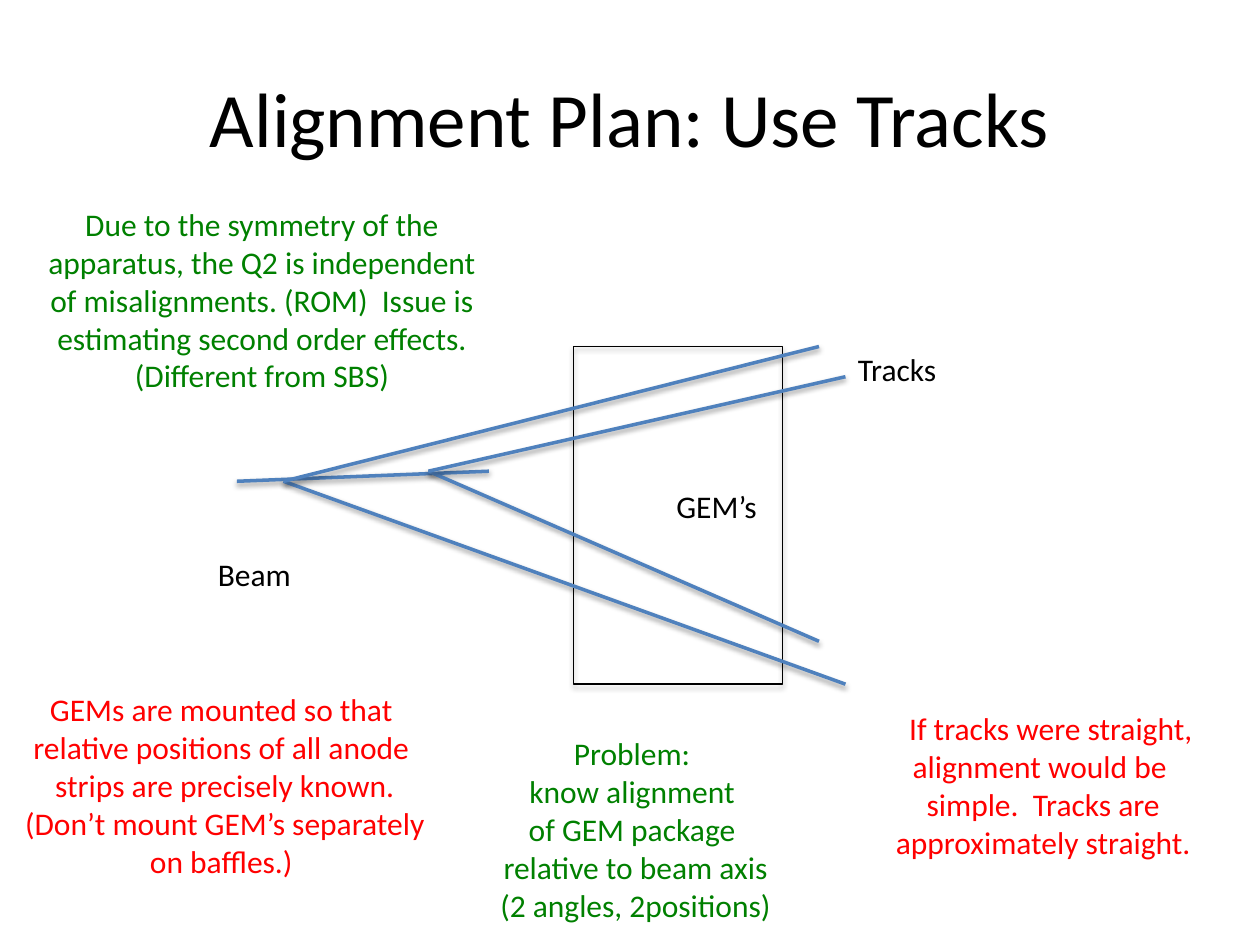
from lxml.etree import SubElement
from pptx import Presentation
from pptx.dml.color import RGBColor
from pptx.enum.shapes import MSO_CONNECTOR, MSO_SHAPE
from pptx.enum.text import MSO_ANCHOR, MSO_AUTO_SIZE, PP_ALIGN
from pptx.oxml.ns import qn
from pptx.util import Inches, Pt

BLACK = RGBColor(0x00, 0x00, 0x00)
BLUE = RGBColor(0x4F, 0x81, 0xBD)
GREEN = RGBColor(0x00, 0x80, 0x00)
RED = RGBColor(0xFF, 0x00, 0x00)

# The slide is a grid of 100 columns by 75 rows with square cells
CELL = Inches(0.1)
COLUMNS, ROWS = 100, 75

# Points of the drawing, as (column, row)
FIRST_VERTEX = (22.5, 38.2)
SECOND_VERTEX = (34, 37.4)
BEAM = ((18.8, 38.2), (38.8, 37.4))
TRACKS = [
    (SECOND_VERTEX, (65, 50.9)),
    (SECOND_VERTEX, (67.1, 29.9)),
    (FIRST_VERTEX, (67.1, 54.3)),
    (FIRST_VERTEX, (65, 27.5)),
]
GEM_PACKAGE = (45.5, 27.5, 16.6, 26.8)

# Text and its box, as (column, row, columns, rows)
LABELS = [
    ("Beam", (16.3, 43.6, 7.9, 4)),
    ("GEM’s", (52.7, 38.2, 8.6, 4)),
    ("Tracks", (67.1, 27.3, 8.5, 4)),
]
NOTES = [
    (["If tracks were straight, ", "alignment would be ", "simple.  Tracks are",
      "approximately straight."], (69.8, 55.8, 26, 13.1), RED, 1.2),
    (["Problem: ", "know alignment ", "of GEM package ", "relative to beam axis",
      "(2 angles, 2positions)"], (38.6, 57.8, 23.7, 16.2), GREEN, 0),
    (["Due to the symmetry of the", "apparatus, the Q2 is independent",
      "of misalignments. (ROM)  Issue is", "estimating second order effects.",
      "(Different from SBS)"], (2.6, 15.8, 36.4, 16.2), GREEN, 0),
    (["GEMs are mounted so that ", "relative positions of all anode ",
      "strips are precisely known.", "(Don’t mount GEM’s separately",
      "on baffles.) "], (0.7, 54.3, 34.3, 16.2), RED, 0),
]


def cells(values):
    """Turn grid numbers into lengths."""
    return [int(value * CELL) for value in values]


def set_format(target, values):
    for name, value in values.items():
        setattr(target, name, value)


def add_shadow(shape, distance, opacity):
    """Add a soft black shadow that falls straight down."""
    effects = SubElement(shape._element.spPr, qn("a:effectLst"))
    shadow = SubElement(effects, qn("a:outerShdw"), {
        "blurRad": str(Pt(3.1)), "dist": str(Pt(distance)),
        "dir": str(90 * 60000), "rotWithShape": "0"})
    color = SubElement(shadow, qn("a:srgbClr"), val=str(BLACK))
    SubElement(color, qn("a:alpha"), val=str(opacity * 1000))


def add_text(slide, lines, box, color=BLACK, size=18, alignment=PP_ALIGN.CENTER,
             first_indent=0, frame_format=None):
    text_frame = slide.shapes.add_textbox(*cells(box)).text_frame
    set_format(text_frame, frame_format or {
        "word_wrap": False, "auto_size": MSO_AUTO_SIZE.SHAPE_TO_FIT_TEXT})
    text_frame.text = "\n".join(lines)
    for paragraph in text_frame.paragraphs:
        paragraph.alignment = alignment
        set_format(paragraph.runs[0].font, {"name": "Calibri", "size": Pt(size)})
        paragraph.runs[0].font.color.rgb = color
    if first_indent:
        properties = text_frame.paragraphs[0]._p.get_or_add_pPr()
        properties.set("indent", str(int(first_indent * CELL)))


def add_line(slide, start, end):
    line = slide.shapes.add_connector(
        MSO_CONNECTOR.STRAIGHT, *cells(start), *cells(end))
    line.line.color.rgb = BLUE
    line.line.width = Pt(2)
    add_shadow(line, distance=1.6, opacity=38)


def add_frame(slide, box):
    frame = slide.shapes.add_shape(MSO_SHAPE.RECTANGLE, *cells(box))
    frame.fill.background()
    frame.line.color.rgb = BLACK
    frame.line.width = Pt(0.75)
    add_shadow(frame, distance=1.8, opacity=35)


def main():
    presentation = Presentation()
    set_format(presentation, {"slide_width": COLUMNS * CELL,
                              "slide_height": ROWS * CELL})
    slide = presentation.slides.add_slide(presentation.slide_layouts[6])

    # Title
    add_text(slide, ["Alignment Plan: Use Tracks"], (5, 3, 90, 12.5), size=44,
             frame_format={"word_wrap": True,
                           "vertical_anchor": MSO_ANCHOR.MIDDLE})

    # Detector package, beam and tracks
    add_frame(slide, GEM_PACKAGE)
    for start, end in [BEAM, *TRACKS]:
        add_line(slide, start, end)

    # Labels of the drawing
    for label, box in LABELS:
        add_text(slide, [label], box, alignment=PP_ALIGN.LEFT)

    # Notes around the drawing
    for lines, box, color, first_indent in NOTES:
        add_text(slide, lines, box, color, first_indent=first_indent)

    presentation.save("out.pptx")


if __name__ == "__main__":
    main()
